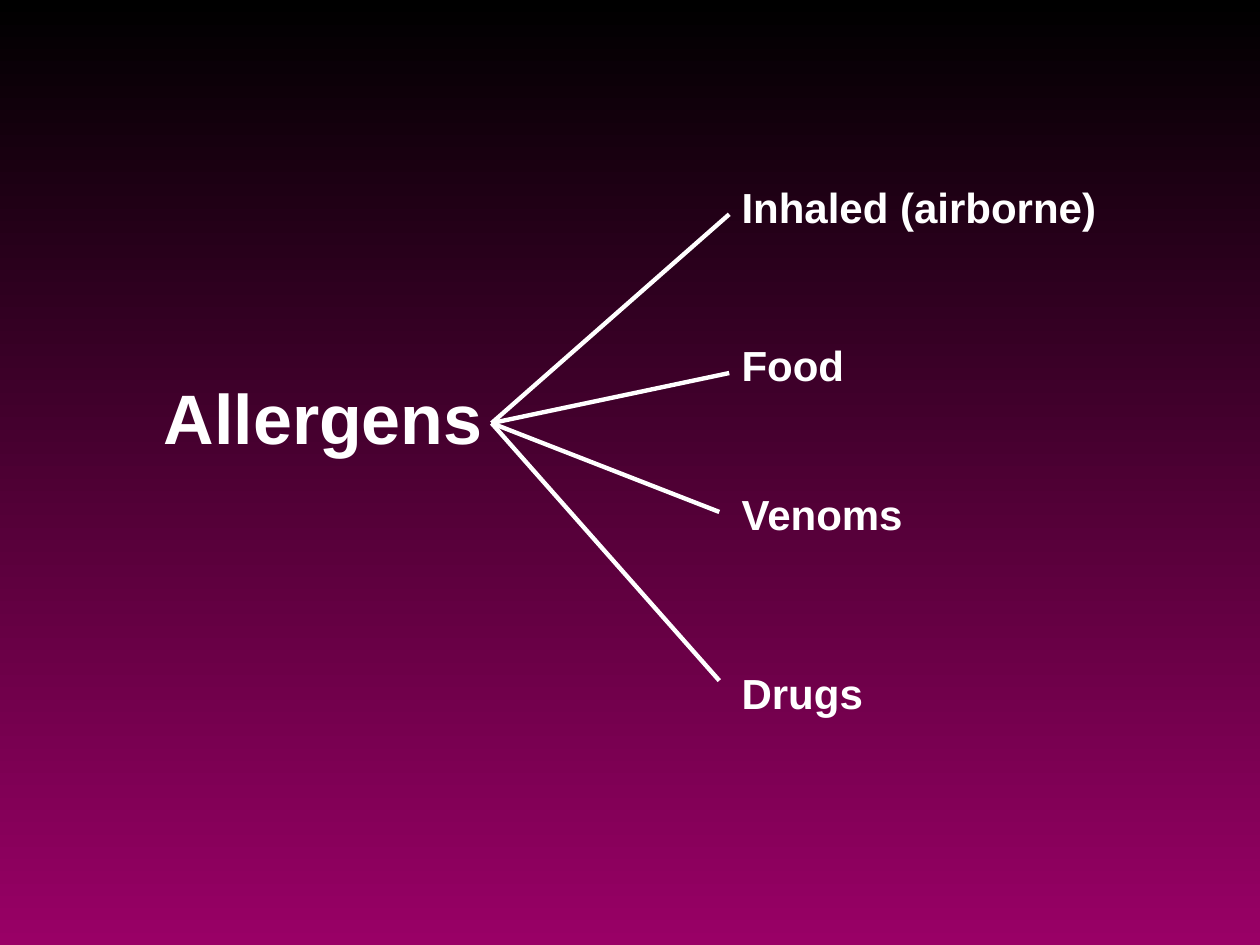
from pptx import Presentation
from pptx.dml.color import RGBColor
from pptx.enum.shapes import MSO_CONNECTOR
from pptx.enum.text import MSO_ANCHOR, MSO_AUTO_SIZE, PP_ALIGN
from pptx.oxml.ns import qn
from pptx.util import Cm, Pt

BLACK = RGBColor(0x00, 0x00, 0x00)
MAGENTA = RGBColor(0x99, 0x00, 0x66)
WHITE = RGBColor(0xFF, 0xFF, 0xFF)

FRAME_FORMAT = {
    "word_wrap": False,
    "auto_size": MSO_AUTO_SIZE.SHAPE_TO_FIT_TEXT,
    "vertical_anchor": MSO_ANCHOR.TOP,
}
FONT_FORMAT = {"name": "Arial", "bold": True}

HUB = (9.91, 8.53)
LABEL_LEFT = 14.7
LABEL_HEIGHT = 1.27
BRANCHES = [
    ("Inhaled (airborne)", 3.53, 7.65, (14.7, 4.32)),
    ("Food", 6.72, 2.57, (14.7, 7.52)),
    ("Venoms", 9.73, 3.81, (14.5, 10.32)),
    ("Drugs", 13.34, 2.95, (14.5, 13.72)),
]


def apply_format(target, values):
    for attribute, value in values.items():
        setattr(target, attribute, value)


def paint_background(slide):
    fill = slide.background.fill
    fill.gradient()
    fill.gradient_angle = 270
    for stop, color in zip(fill.gradient_stops, (BLACK, MAGENTA)):
        stop.color.rgb = color


def write_text(holder, text, size):
    frame = holder.text_frame
    frame.text = text
    apply_format(frame, FRAME_FORMAT)
    paragraph = frame.paragraphs[0]
    paragraph.alignment = PP_ALIGN.LEFT
    font = paragraph.runs[0].font
    apply_format(font, {**FONT_FORMAT, "size": Pt(size)})
    font.color.rgb = WHITE


def place_title(slide, text):
    title = slide.shapes.title
    apply_format(title, {
        "left": Cm(3.05), "top": Cm(7.42),
        "width": Cm(6.93), "height": Cm(1.96),
    })
    write_text(title, text, 40)
    title.text_frame.margin_right = Cm(0)


def add_label(slide, text, top, width):
    label = slide.shapes.add_textbox(
        Cm(LABEL_LEFT), Cm(top), Cm(width), Cm(LABEL_HEIGHT))
    write_text(label, text, 24)


def add_branch_line(slide, end):
    branch = slide.shapes.add_connector(
        MSO_CONNECTOR.STRAIGHT, *map(Cm, HUB + end))
    branch.line.color.rgb = WHITE
    branch.line.width = Pt(2.5)
    properties = branch._element.spPr
    properties.append(properties.makeelement(qn("a:effectLst"), {}))


def main():
    deck = Presentation()
    apply_format(deck, {"slide_width": Cm(25.4), "slide_height": Cm(19.05)})
    slide = deck.slides.add_slide(deck.slide_layouts[5])
    paint_background(slide)
    place_title(slide, "Allergens")
    for text, top, width, end in BRANCHES:
        add_label(slide, text, top, width)
        add_branch_line(slide, end)
    deck.save("out.pptx")


if __name__ == "__main__":
    main()
